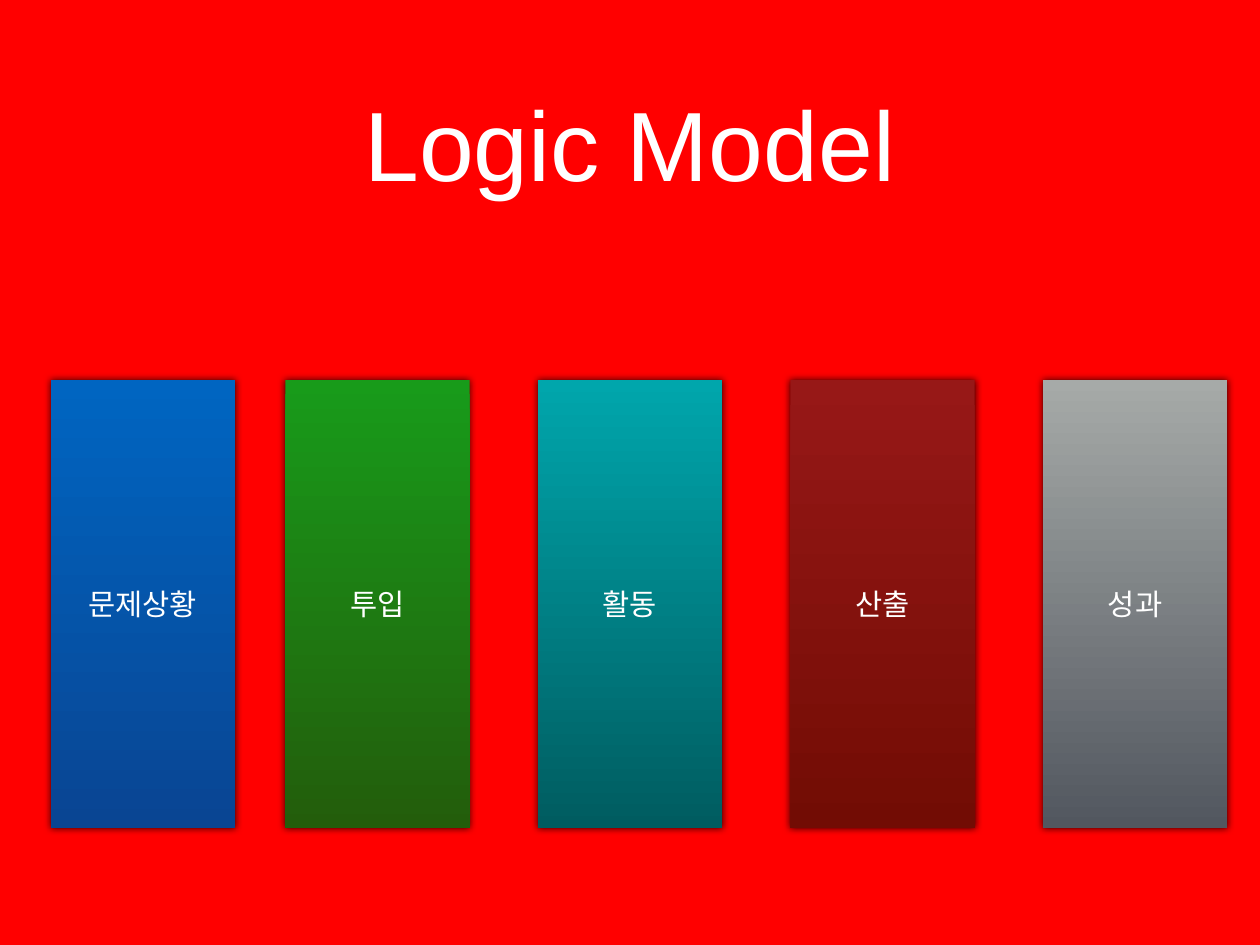
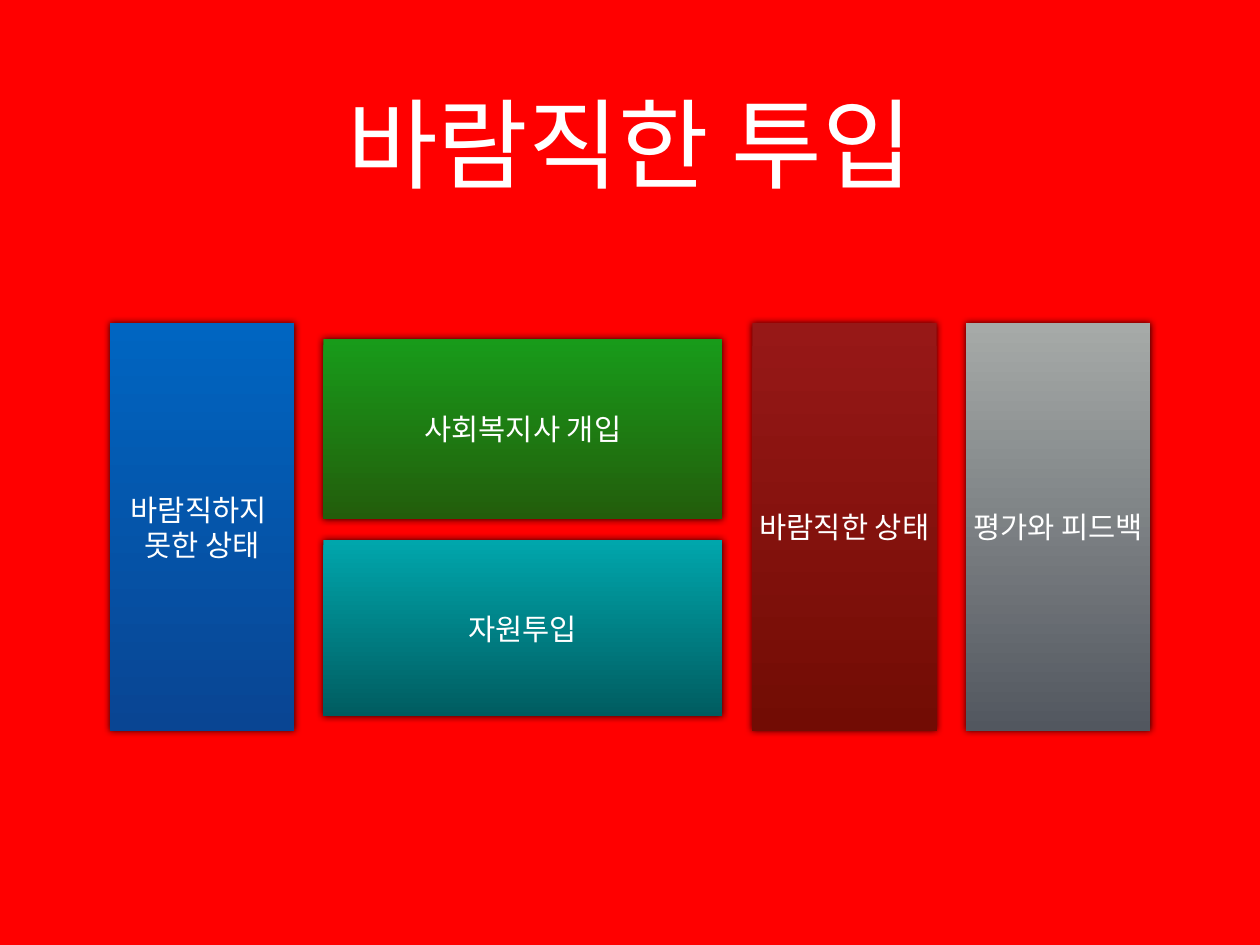
from pptx import Presentation
from pptx.dml.color import RGBColor
from pptx.enum.shapes import MSO_SHAPE
from pptx.enum.text import MSO_ANCHOR, MSO_AUTO_SIZE, PP_ALIGN
from pptx.oxml import parse_xml
from pptx.oxml.ns import nsdecls
from pptx.util import Pt

PX = 9144
RECT = MSO_SHAPE.RECTANGLE
CENTER = PP_ALIGN.CENTER
RED = RGBColor(0xFF, 0x00, 0x00)
WHITE = RGBColor(0xFF, 0xFF, 0xFF)
BLUE = RGBColor(0x00, 0x65, 0xC1), RGBColor(0x09, 0x45, 0x93)
GREEN = RGBColor(0x18, 0x9B, 0x1A), RGBColor(0x23, 0x5D, 0x0B)
TEAL = RGBColor(0x00, 0xA6, 0xAC), RGBColor(0x00, 0x5C, 0x60)
MAROON = RGBColor(0x97, 0x18, 0x17), RGBColor(0x72, 0x0C, 0x04)
GRAY = RGBColor(0xA6, 0xAA, 0xA8), RGBColor(0x52, 0x57, 0x5F)
TONES = [BLUE, GREEN, TEAL, MAROON, GRAY]

FRAME = {
    "word_wrap": True,
    "auto_size": MSO_AUTO_SIZE.NONE,
    "vertical_anchor": MSO_ANCHOR.MIDDLE,
    "margin_left": 6 * PX,
    "margin_top": 6 * PX,
    "margin_right": 6 * PX,
    "margin_bottom": 6 * PX,
}
FONT = {"name": "Arial", "bold": False}
SHADOW = (
    f'<a:outerShdw {nsdecls("a")} blurRad="76200" dist="0" dir="18900000" '
    'algn="ctr" rotWithShape="0"><a:srgbClr val="000000">'
    '<a:alpha val="80000"/></a:srgbClr></a:outerShdw>'
)


def write(shape, text, size):
    frame = shape.text_frame
    frame.text = text
    for key, value in FRAME.items():
        setattr(frame, key, value)
    for para in frame.paragraphs:
        para.alignment = CENTER
        for run in para.runs:
            for key, value in FONT.items():
                setattr(run.font, key, value)
            run.font.size = Pt(size)
            run.font.color.rgb = WHITE


def panel(slide, text, tone, box):
    shape = slide.shapes.add_shape(RECT, *(n * PX for n in box))
    shape.fill.gradient()
    shape.fill.gradient_angle = 270
    for stop, color, place in zip(shape.fill.gradient_stops, tone, (0, 1)):
        stop.color.rgb = color
        stop.position = place
    shape.line.fill.background()
    shape.shadow.inherit = False
    effects = shape.element.spPr.find("{*}effectLst")
    effects.append(parse_xml(SHADOW))
    write(shape, text, 24)


WIDTH = 208
STEP = 285
FIRST = 322
LEFTS = [57] + [FIRST + STEP * n for n in range(4)]
STAGES = ["문제상황", "투입", "활동", "산출", "성과"]
INPUTS = ["바람직하지 \n못한 상태", "사회복지사 개입", "자원투입", "바람직한 상태", "평가와 피드백"]
SIDE = 365, WIDTH, 460
BOXES = [
    (124, *SIDE),
    (365, 383, 450, 203),
    (365, 610, 450, 199),
    (849, *SIDE),
    (1090, *SIDE),
]
PAGES = [
    ("Logic Model", STAGES, [(left, 429, WIDTH, 506) for left in LEFTS]),
    ("바람직한 투입", INPUTS, BOXES),
]

prs = Presentation()
prs.slide_width = 1422 * PX
prs.slide_height = 1067 * PX
ground = prs.slide_master.background.fill
ground.solid()
ground.fore_color.rgb = RED
layout = prs.slide_layouts[5]
head = layout.placeholders[0]
head.left, head.top, head.width, head.height = (n * PX for n in (104, 44, 1214, 232))

for title, labels, boxes in PAGES:
    slide = prs.slides.add_slide(layout)
    write(slide.shapes.title, title, 80)
    for label, tone, box in zip(labels, TONES, boxes):
        panel(slide, label, tone, box)

prs.save("out.pptx")
